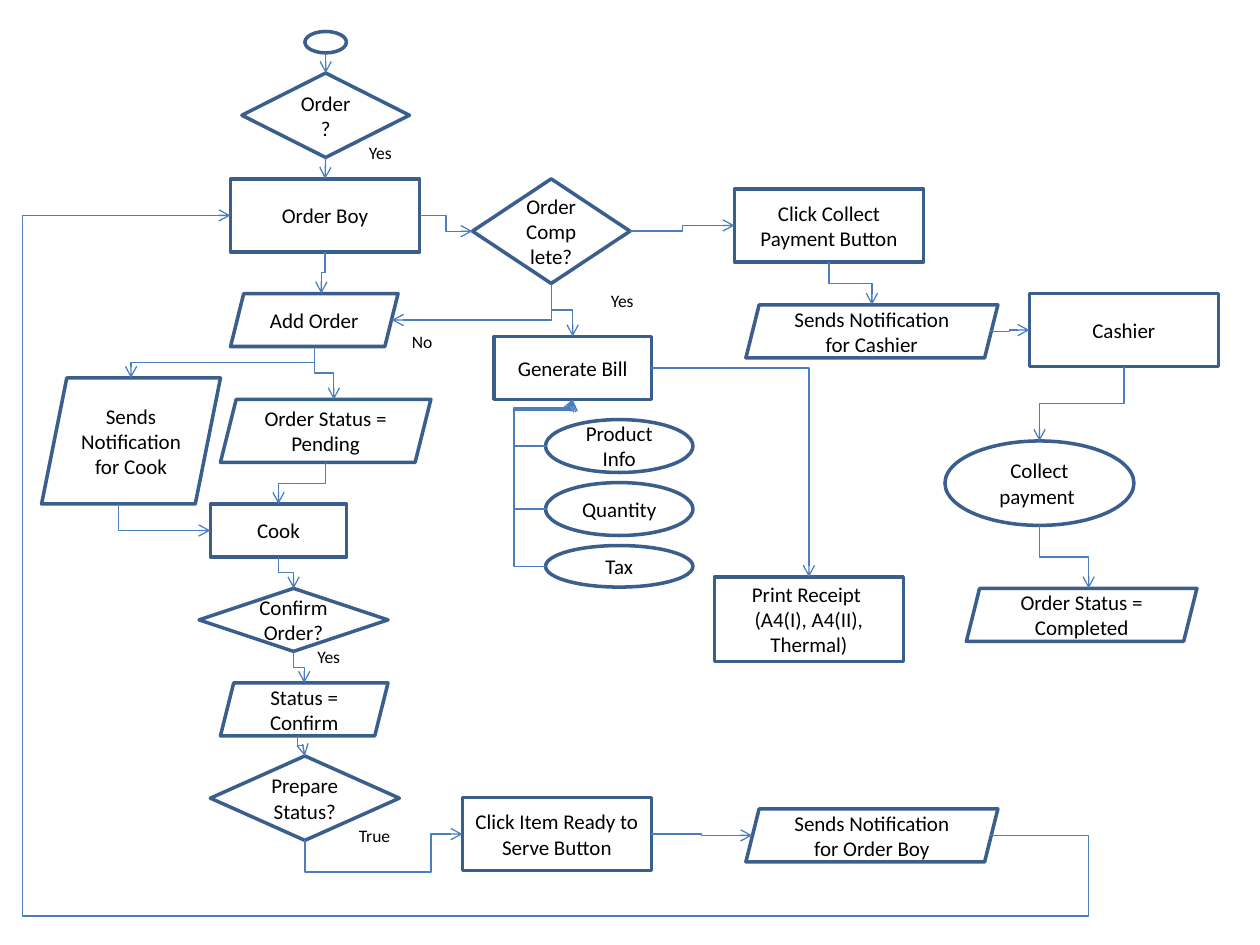
import pptx
import pptx.dml.color
import pptx.enum.shapes
import pptx.enum.text
import pptx.oxml
import pptx.oxml.ns
import pptx.util

Inches = pptx.util.Inches
MSO = pptx.enum.shapes.MSO_SHAPE
CONNECTOR = pptx.enum.shapes.MSO_CONNECTOR
qn = pptx.oxml.ns.qn

BOX_LINE = "3A5F8C"
FLOW_LINE = "4B7EBC"
SIDES = {"top": (0.5, 0), "left": (0, 0.5), "bottom": (0.5, 1), "right": (1, 0.5)}

NODES = {
    "start": (MSO.FLOWCHART_CONNECTOR, 2.42, 0.25, 0.33, 0.17, []),
    "order": (MSO.DIAMOND, 1.92, 0.58, 1.33, 0.67, ["Order?"]),
    "order boy": (MSO.RECTANGLE, 1.83, 1.42, 1.5, 0.58, ["Order Boy"]),
    "complete": (MSO.DIAMOND, 3.75, 1.42, 1.25, 0.83, ["Order Complete?"]),
    "add": (MSO.PARALLELOGRAM, 1.83, 2.33, 1.33, 0.42, ["Add Order"]),
    "tell cook": (MSO.PARALLELOGRAM, 0.33, 3, 1.42, 1, ["Sends Notification for Cook"]),
    "pending": (MSO.PARALLELOGRAM, 1.75, 3.17, 1.67, 0.5, ["Order Status = Pending"]),
    "cook": (MSO.RECTANGLE, 1.67, 4, 1.08, 0.42, ["Cook"]),
    "confirm": (MSO.DIAMOND, 1.58, 4.67, 1.5, 0.5, ["Confirm Order?"]),
    "confirmed": (MSO.PARALLELOGRAM, 1.75, 5.42, 1.33, 0.42, ["Status = Confirm"]),
    "prepare": (MSO.DIAMOND, 1.67, 6, 1.5, 0.67, ["Prepare Status?"]),
    "ready": (MSO.RECTANGLE, 3.67, 6.33, 1.5, 0.58, ["Click Item Ready to Serve Button"]),
    "tell boy": (MSO.PARALLELOGRAM, 5.92, 6.42, 2, 0.42, ["Sends Notification for Order Boy"]),
    "bill": (MSO.RECTANGLE, 3.92, 2.67, 1.25, 0.5, ["Generate Bill"]),
    "product": (MSO.OVAL, 4.33, 3.33, 1.17, 0.42, ["Product Info"]),
    "quantity": (MSO.OVAL, 4.33, 3.83, 1.17, 0.42, ["Quantity"]),
    "tax": (MSO.OVAL, 4.33, 4.33, 1.17, 0.33, ["Tax"]),
    "receipt": (MSO.RECTANGLE, 5.67, 4.58, 1.5, 0.67, ["Print Receipt ", "(A4(I), A4(II), Thermal)"]),
    "click collect": (MSO.RECTANGLE, 5.83, 1.5, 1.5, 0.58, ["Click Collect Payment Button"]),
    "tell cashier": (MSO.PARALLELOGRAM, 5.92, 2.42, 2, 0.42, ["Sends Notification for Cashier"]),
    "cashier": (MSO.RECTANGLE, 8.17, 2.33, 1.5, 0.58, ["Cashier"]),
    "collect": (MSO.OVAL, 7.5, 3.5, 1.5, 0.67, ["Collect payment "]),
    "completed": (MSO.PARALLELOGRAM, 7.67, 4.67, 1.83, 0.42, ["Order Status = Completed"]),
}

LABELS = [
    ("Yes", 2.83, 1.08, 0.39, False),
    ("Yes", 4.75, 2.25, 0.5, True),
    ("No", 3.17, 2.58, 0.5, True),
    ("Yes", 2.42, 5.08, 0.5, True),
    ("True", 2.75, 6.5, 0.46, False),
]

STEPS_DOWN = [
    (("order boy", "bottom"), (2.55, 2.33)),
    (("add", "bottom"), (2.65, 3.17)),
    (("add", "bottom"), ("tell cook", "top")),
    (("pending", "bottom"), ("cook", "top")),
    (("cook", "bottom"), ("confirm", "top")),
    (("confirm", "bottom"), ("confirmed", "top")),
    ((2.36, 5.84), ("prepare", "top")),
    (("complete", "bottom"), ("bill", "top")),
    (("click collect", "bottom"), ("tell cashier", "top")),
    (("cashier", "bottom"), ("collect", "top")),
    (("collect", "bottom"), (8.64, 4.67)),
]

STEPS_ACROSS = [
    (("order boy", "right"), ("complete", "left")),
    (("complete", "right"), ("click collect", "left")),
    ((7.86, 2.63), ("cashier", "left")),
    (("ready", "right"), (5.97, 6.63)),
]


def color(value):
    return pptx.dml.color.RGBColor.from_string(value)


def write(tf, lines, size, align=None):
    for i, line in enumerate(lines):
        p = tf.paragraphs[0] if i == 0 else tf.add_paragraph()
        p.alignment = align
        r = p.add_run()
        r.text = line
        r.font.name = "Calibri"
        r.font.size = pptx.util.Pt(size)
        r.font.color.rgb = color("000000")


def add_node(s, kind, x, y, w, h, lines):
    sp = s.shapes.add_shape(kind, Inches(x), Inches(y), Inches(w), Inches(h))
    sp.shadow.inherit = False
    sp.fill.background()
    sp.line.color.rgb = color(BOX_LINE)
    sp.line.width = pptx.util.Pt(2)
    sp.text_frame.word_wrap = True
    sp.text_frame.vertical_anchor = pptx.enum.text.MSO_ANCHOR.MIDDLE
    write(sp.text_frame, lines, 12, pptx.enum.text.PP_ALIGN.CENTER)
    return sp


def add_label(s, text, x, y, w, wrap):
    tf = s.shapes.add_textbox(Inches(x), Inches(y), Inches(w), Inches(0.27)).text_frame
    tf.word_wrap = wrap
    tf.auto_size = pptx.enum.text.MSO_AUTO_SIZE.SHAPE_TO_FIT_TEXT
    write(tf, [text], 10)


def point(place):
    if place[0] not in NODES:
        return place
    x, y, w, h = NODES[place[0]][1:5]
    fx, fy = SIDES[place[1]]
    return x + fx * w, y + fy * h


def style_flow(c):
    c.line.color.rgb = color(FLOW_LINE)
    c.line.width = pptx.util.Pt(0.75)
    ln = c.line._get_or_add_ln()
    ln.append(pptx.oxml.parse_xml('<a:tailEnd %s type="arrow"/>' % pptx.oxml.ns.nsdecls("a")))
    c._element.spPr.append(pptx.oxml.parse_xml("<a:effectLst %s/>" % pptx.oxml.ns.nsdecls("a")))


def add_straight(s, start, end):
    ends = [Inches(v) for v in point(start) + point(end)]
    c = s.shapes.add_connector(CONNECTOR.STRAIGHT, *ends)
    style_flow(c)
    return c


def add_elbow(s, start, end, down=False, turns=None):
    (x1, y1), (x2, y2) = point(start), point(end)
    dx, dy = x2 - x1, y2 - y1
    ends = (x1, y1, x2, y2)
    if down:
        mx, my = (x1 + x2) / 2, (y1 + y2) / 2
        ends = (mx - dy / 2, my + dx / 2, mx + dy / 2, my - dx / 2)
    c = s.shapes.add_connector(CONNECTOR.ELBOW, *[Inches(v) for v in ends])
    spPr = c._element.spPr
    if down:
        spPr.find(qn("a:xfrm")).set("rot", "5400000")
    if turns is not None:
        geom = spPr.find(qn("a:prstGeom"))
        geom.set("prst", "bentConnector%d" % (len(turns) + 2))
        for i, turn in enumerate(turns):
            along_y = (i % 2 == 0) == down
            share = (turn - y1) / dy if along_y else (turn - x1) / dx
            gd = geom.get_or_add_avLst().makeelement(qn("a:gd"), {
                "name": "adj%d" % (i + 1), "fmla": "val %d" % round(share * 100000)})
            geom.get_or_add_avLst().append(gd)
    style_flow(c)


def main():
    prs = pptx.Presentation()
    prs.slide_width, prs.slide_height = Inches(10), Inches(7.5)
    s = prs.slides.add_slide(prs.slide_layouts[6])

    shapes = {name: add_node(s, *node) for name, node in NODES.items()}
    shapes["tell cook"].adjustments[0] = 0.2
    for label in LABELS:
        add_label(s, *label)

    c = add_straight(s, ("start", "bottom"), ("order", "top"))
    c.end_connect(shapes["order"], 0)
    c = add_straight(s, ("order", "bottom"), ("order boy", "top"))
    c.begin_connect(shapes["order"], 2)
    c.end_connect(shapes["order boy"], 0)

    for start, end in STEPS_DOWN:
        add_elbow(s, start, end, down=True)
    for start, end in STEPS_ACROSS:
        add_elbow(s, start, end)
    for name, turn in (("tax", 3.26), ("quantity", 3.24), ("product", 3.25)):
        add_elbow(s, (name, "left"), ("bill", "bottom"), turns=[4.08, turn])

    add_elbow(s, (0.94, 4), ("cook", "left"), down=True, turns=[])
    add_elbow(s, ("complete", "bottom"), (3.11, 2.54), down=True, turns=[])
    add_elbow(s, ("bill", "right"), ("receipt", "top"), turns=[])
    add_elbow(s, ("prepare", "bottom"), ("ready", "left"), down=True, turns=[6.92, 3.42])
    add_elbow(s, (7.86, 6.63), ("order boy", "left"), turns=[8.64, 7.27, 0.18])

    prs.save("out.pptx")


if __name__ == "__main__":
    main()
